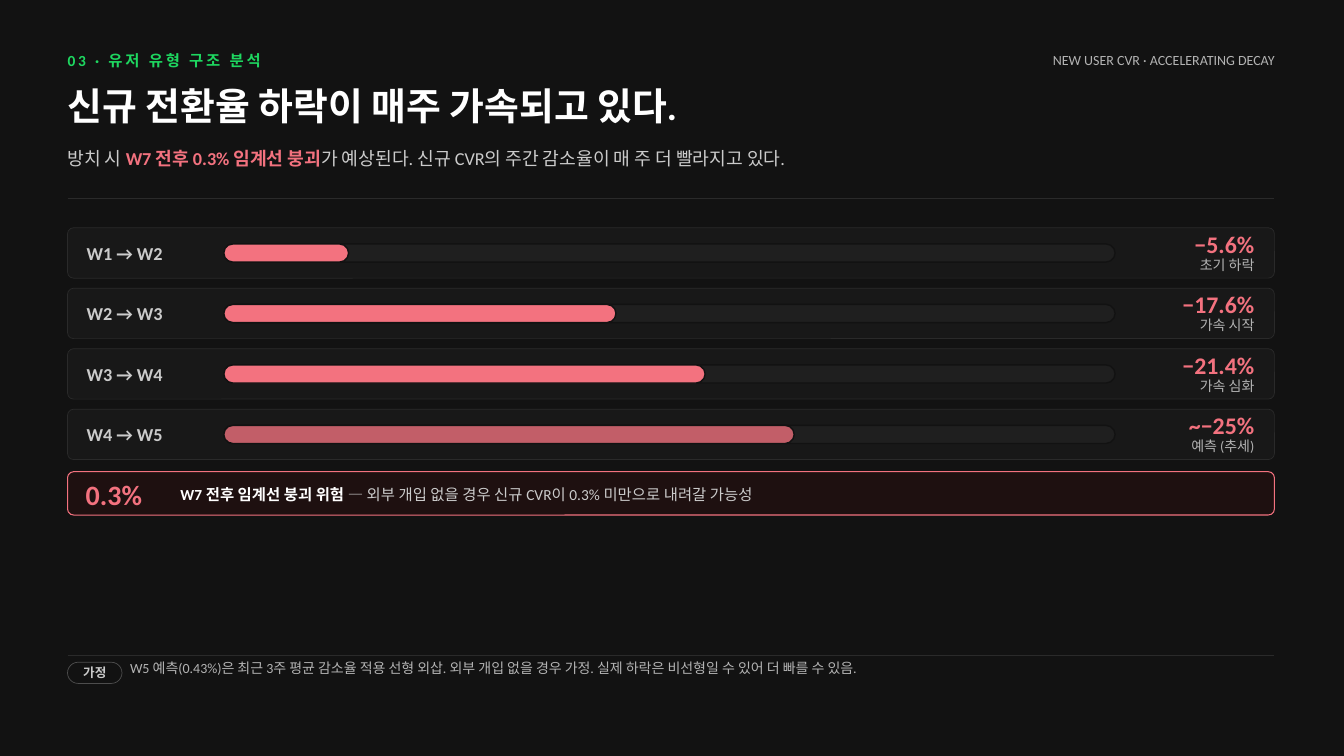
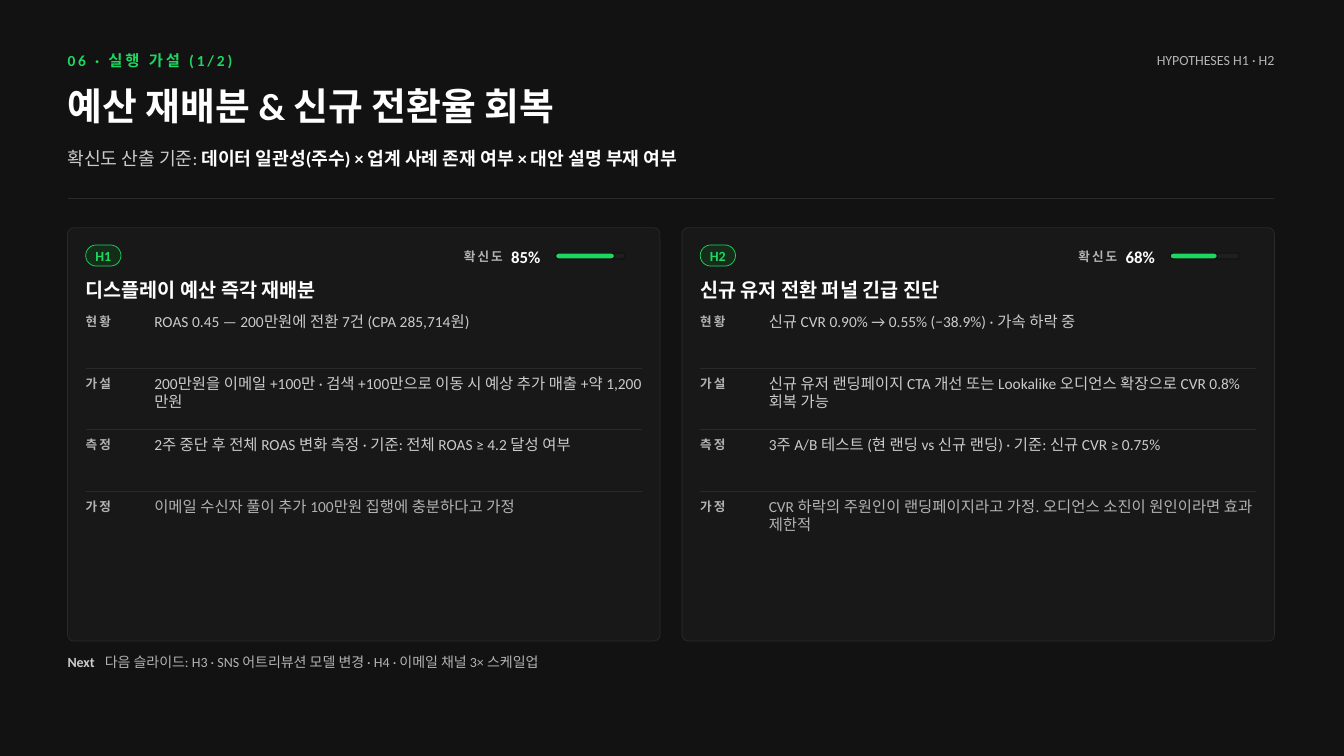
from typing import NamedTuple

from lxml import etree
from pptx import Presentation
from pptx.dml.color import RGBColor
from pptx.enum.shapes import MSO_CONNECTOR as Connector, MSO_SHAPE as Shape
from pptx.enum.text import MSO_ANCHOR as Anchor, PP_ALIGN as Align
from pptx.oxml.ns import qn
from pptx.util import Inches, Pt

FONT = "Calibri"
BACK, CARD, TRACK, RULE = "121212", "181818", "1F1F1F", "2A2A2A"
WHITE, LIGHT, MUTED, OUTLINE = "FFFFFF", "CBCBCB", "B3B3B3", "4D4D4D"
GREEN, DARK_GREEN = "1ED760", "162C1A"
RED, SOFT_RED, DARK_RED = "F3727F", "C25E68", "1E1010"

SLIDE_W, SLIDE_H = 13.33, 7.5
LEFT = 0.67
WIDTH = SLIDE_W - 2 * LEFT - 0.02
RIGHT = LEFT + WIDTH
BODY_TOP = 2.26
PAD = 0.18
RADIUS = 0.06


class Style(NamedTuple):
    size: float
    colour: str
    bold: bool = False
    spacing: float = 0


KICKER = Style(11, GREEN, True, 2)
TITLE = Style(27, WHITE, True)
LEAD = Style(13, LIGHT)
LABEL = Style(9, MUTED, True, 1.5)
BODY = Style(11, LIGHT)
NOTE = Style(10, MUTED)


def rgb(colour):
    return RGBColor.from_string(colour)


def add_runs(frame, runs, align=Align.LEFT, anchor=Anchor.MIDDLE, tab=None):
    """Write (text, style) pairs into one paragraph, with an optional tab stop in inches."""
    frame.margin_left = frame.margin_right = frame.margin_top = frame.margin_bottom = 0
    frame.word_wrap = True
    frame.vertical_anchor = anchor
    para = frame.paragraphs[0]
    para.alignment = align
    if tab:
        stops = etree.SubElement(para._p.get_or_add_pPr(), qn("a:tabLst"))
        etree.SubElement(stops, qn("a:tab"), pos=str(Inches(tab)), algn="l")
    for words, style in runs:
        span = para.add_run()
        span.text = words
        span.font.name = FONT
        span.font.size = Pt(style.size)
        span.font.bold = style.bold
        span.font.color.rgb = rgb(style.colour)
        if style.spacing:
            span.font._element.set("spc", str(int(style.spacing * 100)))


def add_text(page, x, y, w, h, runs, **layout):
    box = page.shapes.add_textbox(Inches(x), Inches(y), Inches(w), Inches(h))
    add_runs(box.text_frame, runs, **layout)


def add_panel(page, x, y, w, h, fill, line, weight=0.5, radius=RADIUS):
    panel = page.shapes.add_shape(
        Shape.ROUNDED_RECTANGLE, Inches(x), Inches(y), Inches(w), Inches(h))
    panel.adjustments[0] = min(radius / min(w, h), 0.5)
    panel.shadow.inherit = False
    panel.fill.solid()
    panel.fill.fore_color.rgb = rgb(fill)
    panel.line.color.rgb = rgb(line)
    panel.line.width = Pt(weight)
    return panel


def add_pill(page, x, y, w, words, style, fill, line):
    pill = add_panel(page, x, y, w, 0.21, fill, line, radius=w)
    add_runs(pill.text_frame, [(words, style)], align=Align.CENTER)


def add_meter(page, x, y, w, h, share, colour):
    """A full track with a filled share of it on top."""
    for length, fill in ((w, TRACK), (w * share, colour)):
        add_panel(page, x, y, length, h, fill, BACK, weight=1, radius=h)


def add_rule(page, x, y, w, weight=0.75):
    rule = page.shapes.add_connector(
        Connector.STRAIGHT, Inches(x), Inches(y), Inches(x + w), Inches(y))
    rule.line.color.rgb = rgb(RULE)
    rule.line.width = Pt(weight)
    etree.SubElement(rule._element.spPr, qn("a:effectLst"))


def add_page(deck, kicker, tag, title, lead):
    """A dark slide with the shared heading band."""
    page = deck.slides.add_slide(deck.slide_layouts[6])
    page.background.fill.solid()
    page.background.fill.fore_color.rgb = rgb(BACK)
    split = WIDTH * 0.65
    add_text(page, LEFT, 0.5, split, 0.19, [(kicker, KICKER)])
    add_text(page, LEFT + split, 0.5, WIDTH - split, 0.19, [(tag, NOTE)], align=Align.RIGHT)
    add_text(page, LEFT, 0.82, WIDTH, 0.56, [(title, TITLE)], anchor=Anchor.TOP)
    add_text(page, LEFT, 1.46, WIDTH, 0.42, lead, anchor=Anchor.TOP)
    add_rule(page, LEFT, 1.97, WIDTH)
    return page


def add_decay_row(page, y, weeks, share, colour, change, remark):
    add_panel(page, LEFT, y, WIDTH, 0.5, CARD, RULE)
    add_text(page, LEFT + 0.19, y + 0.04, 1.36, 0.42, [(weeks, Style(13, LIGHT, True))])
    add_meter(page, 2.22, y + 0.16, 8.84, 0.18, share, colour)
    for top, height, words, style in (
            (0.03, 0.26, change, Style(17, RED, True)),
            (0.29, 0.15, remark, NOTE)):
        add_text(page, 11.25, y + top, 1.19, height, [(words, style)], align=Align.RIGHT)


def add_alert(page, y, figure, runs):
    add_panel(page, LEFT, y, WIDTH, 0.43, DARK_RED, RED, weight=0.75)
    add_text(page, LEFT + PAD, y + 0.03, 0.83, 0.38, [(figure, Style(20, RED, True))])
    add_text(page, 1.79, y + 0.06, 10.65, 0.33, runs)


def add_hypothesis(page, x, w, code, confidence, title, fields):
    inner, inner_w = x + PAD, w - 2 * PAD
    add_panel(page, x, BODY_TOP, w, 4.1, CARD, RULE)
    add_pill(page, inner, 2.43, 0.35, code, Style(10, GREEN, True), DARK_GREEN, GREEN)
    add_text(page, x + 3.93, 2.47, 0.42, 0.15, [("확신도", LABEL)])
    add_text(page, x + 4.4, 2.47, 0.4, 0.15, [(f"{confidence}%", Style(12, WHITE, True))])
    add_meter(page, x + 4.84, 2.51, 0.69, 0.06, confidence / 100, GREEN)
    add_text(page, inner, 2.69, inner_w, 0.36, [(title, Style(14, WHITE, True))])

    labels = ("현황", "가설", "측정", "가정")
    pitch, indent = 0.61, 0.68
    for index, (label, words) in enumerate(zip(labels, fields)):
        y = 3.1 + index * pitch
        if index:
            add_rule(page, inner, y - 0.06, inner_w, weight=0.5)
        style = BODY._replace(colour=MUTED) if label == "가정" else BODY
        add_text(page, inner, y, 0.62, 0.18, [(label, LABEL)])
        add_text(page, inner + indent, y, inner_w - indent, 0.49, [(words, style)],
                 anchor=Anchor.TOP)


def build_decay(deck):
    page = add_page(
        deck, "03 · 유저 유형 구조 분석", "NEW USER CVR · ACCELERATING DECAY",
        "신규 전환율 하락이 매주 가속되고 있다.",
        [("방치 시 ", LEAD),
         ("W7 전후 0.3% 임계선 붕괴", Style(13, RED, True)),
         ("가 예상된다. 신규 CVR의 주간 감소율이 매 주 더 빨라지고 있다.", LEAD)])
    rows = (
        ("W1 → W2", 0.14, RED, "−5.6%", "초기 하락"),
        ("W2 → W3", 0.44, RED, "−17.6%", "가속 시작"),
        ("W3 → W4", 0.54, RED, "−21.4%", "가속 심화"),
        ("W4 → W5", 0.64, SOFT_RED, "~−25%", "예측 (추세)"),
    )
    for index, row in enumerate(rows):
        add_decay_row(page, BODY_TOP + index * 0.6, *row)
    add_alert(page, 4.68, "0.3%", [
        ("W7 전후 임계선 붕괴 위험", Style(11, WHITE, True)),
        (" — 외부 개입 없을 경우 신규 CVR이 0.3% 미만으로 내려갈 가능성", BODY)])
    add_rule(page, LEFT, 6.5, WIDTH)
    add_pill(page, LEFT, 6.57, 0.54, "가정", Style(9, LIGHT, True), BACK, OUTLINE)
    add_text(page, 1.29, 6.54, RIGHT - 1.29, 0.43, [
        ("W5 예측(0.43%)은 최근 3주 평균 감소율 적용 선형 외삽. 외부 개입 없을 경우 가정. "
         "실제 하락은 비선형일 수 있어 더 빠를 수 있음.", NOTE)], anchor=Anchor.TOP)


def build_hypotheses(deck):
    page = add_page(
        deck, "06 · 실행 가설 (1/2)", "HYPOTHESES H1 · H2",
        "예산 재배분 & 신규 전환율 회복",
        [("확신도 산출 기준: ", LEAD),
         ("데이터 일관성(주수) × 업계 사례 존재 여부 × 대안 설명 부재 여부",
          Style(13, WHITE, True))])
    cards = (
        ("H1", 85, "디스플레이 예산 즉각 재배분", (
            "ROAS 0.45 — 200만원에 전환 7건 (CPA 285,714원)",
            "200만원을 이메일 +100만 · 검색 +100만으로 이동 시 예상 추가 매출 +약 1,200만원",
            "2주 중단 후 전체 ROAS 변화 측정 · 기준: 전체 ROAS ≥ 4.2 달성 여부",
            "이메일 수신자 풀이 추가 100만원 집행에 충분하다고 가정")),
        ("H2", 68, "신규 유저 전환 퍼널 긴급 진단", (
            "신규 CVR 0.90% → 0.55% (−38.9%) · 가속 하락 중",
            "신규 유저 랜딩페이지 CTA 개선 또는 Lookalike 오디언스 확장으로 CVR 0.8% 회복 가능",
            "3주 A/B 테스트 (현 랜딩 vs 신규 랜딩) · 기준: 신규 CVR ≥ 0.75%",
            "CVR 하락의 주원인이 랜딩페이지라고 가정. 오디언스 소진이 원인이라면 효과 제한적")),
    )
    gap = 0.22
    card_w = (WIDTH - gap) / 2
    for index, card in enumerate(cards):
        add_hypothesis(page, LEFT + index * (card_w + gap), card_w, *card)
    add_text(page, LEFT, 6.47, WIDTH, 0.19, [
        ("Next\t", Style(10, LIGHT, True)),
        ("다음 슬라이드: H3 · SNS 어트리뷰션 모델 변경 · H4 · 이메일 채널 3× 스케일업", NOTE)],
        tab=0.37)


def main():
    deck = Presentation()
    deck.slide_width, deck.slide_height = Inches(SLIDE_W), Inches(SLIDE_H)
    build_decay(deck)
    build_hypotheses(deck)
    deck.save("out.pptx")


if __name__ == "__main__":
    main()
